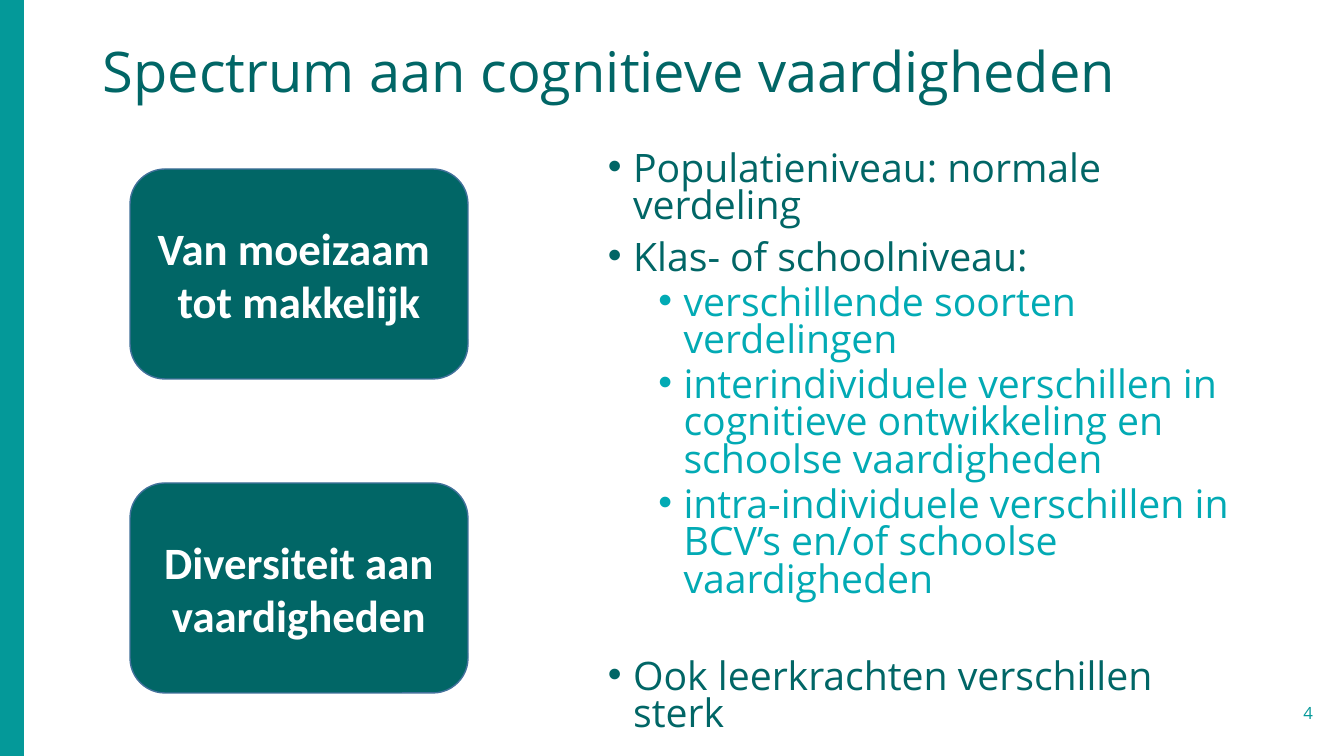
from pptx import Presentation
from pptx.dml.color import RGBColor
from pptx.enum.shapes import MSO_SHAPE
from pptx.enum.text import MSO_ANCHOR, PP_ALIGN
from pptx.oxml.ns import qn
from pptx.util import Emu, Pt
from lxml.etree import SubElement

SCALE = 914400 / 100.8
DARK, TEAL, AQUA = "016666", "049999", "02AAB4"
ITEMS = [
    (0, 0, "Populatieniveau: normale verdeling"),
    (0, 10, "Klas- of schoolniveau:"),
    (1, 5, "verschillende soorten verdelingen"),
    (1, 5, "interindividuele verschillen in cognitieve ontwikkeling en schoolse vaardigheden"),
    (1, 5, "intra-individuele verschillen in BCV’s en/of schoolse vaardigheden"),
    (0, 42, "Ook leerkrachten verschillen sterk"),
]
CARDS = [
    (169, "Van moeizaam \ntot makkelijk"),
    (483, "Diversiteit aan vaardigheden"),
]


def px(num):
    return Emu(round(num * SCALE))


def color(code):
    return RGBColor.from_string(code)


def style(para, face, size, code, bold=False):
    for run in para.runs:
        font = run.font
        font.name, font.size, font.bold = face, Pt(size), bold
        font.color.rgb = color(code)


def block(slide, kind, area, fill, line=None):
    shape = slide.shapes.add_shape(kind, *map(px, area))
    shape.shadow.inherit = False
    shape.fill.solid()
    shape.fill.fore_color.rgb = color(fill)
    if line:
        shape.line.color.rgb = color(line)
        shape.line.width = Pt(1)
    else:
        shape.line.fill.background()
    return shape


def card(slide, top, text):
    shape = block(slide, MSO_SHAPE.ROUNDED_RECTANGLE, (130, top, 338, 210), DARK, "42719B")
    frame = shape.text_frame
    frame.text = text
    frame.word_wrap = True
    frame.vertical_anchor = MSO_ANCHOR.MIDDLE
    for para in frame.paragraphs:
        para.alignment = PP_ALIGN.CENTER
        style(para, "Calibri", 32, "FFFFFF", True)


def label(slide, area, text, size, code, align, gap=1.0):
    frame = slide.shapes.add_textbox(*map(px, area)).text_frame
    frame.text = text
    frame.word_wrap = True
    frame.vertical_anchor = MSO_ANCHOR.MIDDLE
    para = frame.paragraphs[0]
    para.alignment = align
    para.line_spacing = gap
    style(para, "Open Sans", size, code)


def bullet(para, level, code):
    props = para._p.get_or_add_pPr()
    props.set("marL", str(228600 + 457200 * level))
    props.set("indent", "-228600")
    tint = SubElement(props, qn("a:buClr"))
    SubElement(tint, qn("a:srgbClr")).set("val", code)
    SubElement(props, qn("a:buFont")).set("typeface", "Arial")
    SubElement(props, qn("a:buChar")).set("char", "•")


def points(slide, area, items):
    frame = slide.shapes.add_textbox(*map(px, area)).text_frame
    frame.text = "\n".join(text for _, _, text in items)
    frame.word_wrap = True
    for para, (level, space, _) in zip(frame.paragraphs, items):
        code = AQUA if level else DARK
        para.level = level
        bullet(para, level, code)
        para.line_spacing = 0.8
        para.space_before = Pt(space)
        style(para, "Open Sans", 28, code)


def main():
    deck = Presentation()
    deck.slide_width, deck.slide_height = px(1344), px(756)
    slide = deck.slides.add_slide(deck.slide_layouts[6])
    block(slide, MSO_SHAPE.RECTANGLE, (0, 0, 24, 756), TEAL)
    label(slide, (93, 1, 1159, 146), "Spectrum aan cognitieve vaardigheden", 40, DARK, PP_ALIGN.LEFT, 0.9)
    points(slide, (598, 147, 653, 599), ITEMS)
    label(slide, (1236, 693, 87, 40), "4", 12, TEAL, PP_ALIGN.RIGHT)
    for top, text in CARDS:
        card(slide, top, text)
    deck.save("out.pptx")


if __name__ == "__main__":
    main()
